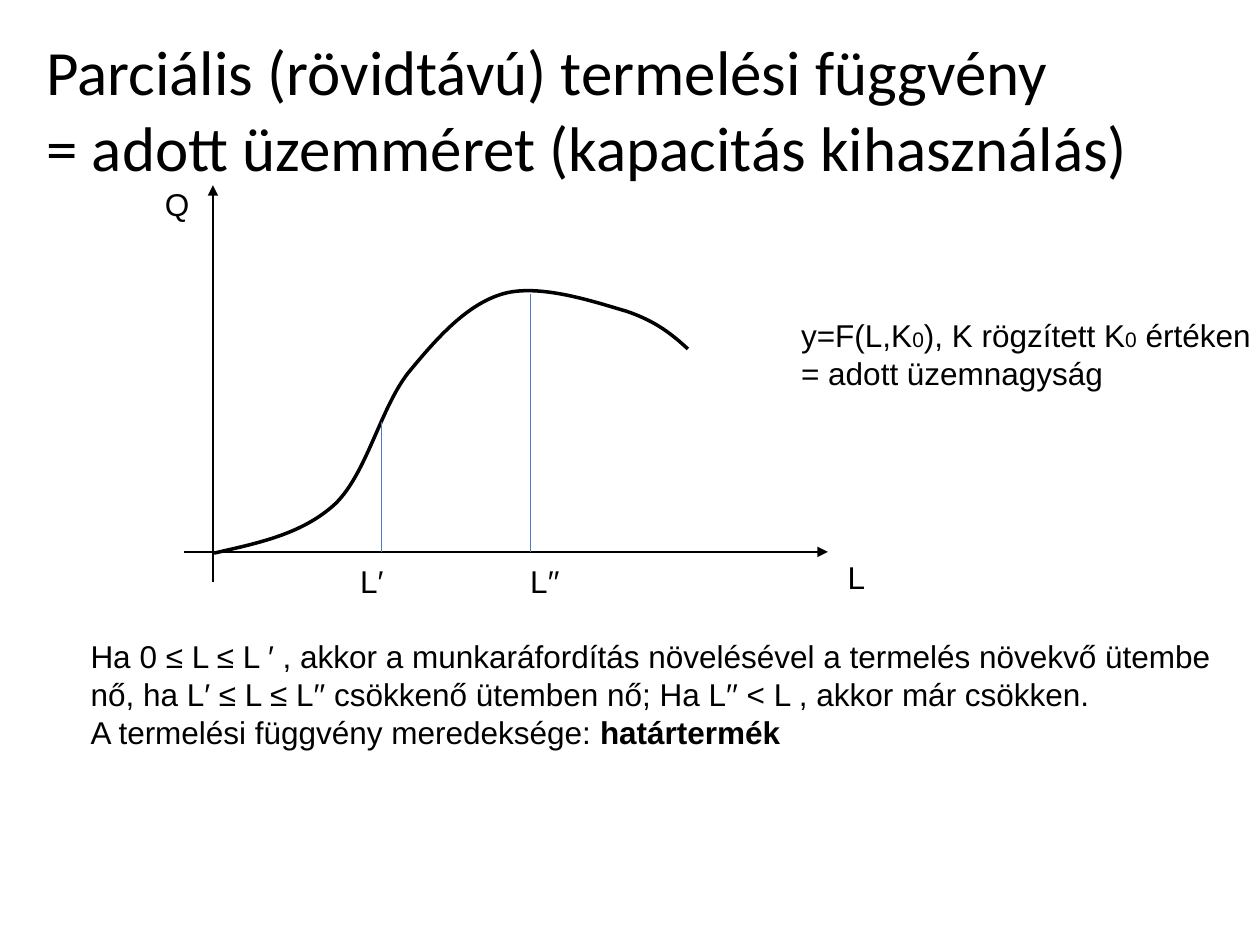
from pptx import Presentation
from pptx.dml.color import RGBColor
from pptx.enum.shapes import MSO_CONNECTOR
from pptx.enum.text import MSO_AUTO_SIZE
from pptx.oxml.ns import qn
from pptx.util import Inches, Pt
from lxml.etree import SubElement

BLACK = "000000"
BLUE = "4B7EBC"


def color(value):
    return RGBColor.from_string(value)


def add_text(page, left, top, width, height, lines, size=18, font="Arial", wrap=False, indent=0):
    box = page.shapes.add_textbox(Inches(left), Inches(top), Inches(width), Inches(height))
    frame = box.text_frame
    frame.word_wrap = wrap
    frame.auto_size = MSO_AUTO_SIZE.SHAPE_TO_FIT_TEXT
    for index, line in enumerate(lines):
        para = frame.paragraphs[0] if index == 0 else frame.add_paragraph()
        if indent:
            para.level = 1
            properties = para._p.get_or_add_pPr()
            properties.set("marL", str(Inches(indent)))
            properties.set("indent", "0")
        para.font.size = Pt(size)
        para.font.name = font
        para.font.color.rgb = color(BLACK)
        for text, style in line:
            span = para.add_run()
            span.text = text
            if style == "bold":
                span.font.bold = True
            elif style == "small":
                span.font.size = Pt(12)


def add_line(page, start, end, line_color, arrow=False):
    line = page.shapes.add_connector(MSO_CONNECTOR.STRAIGHT, *map(Inches, start + end))
    line.line.color.rgb = color(line_color)
    line.line.width = Pt(0.75)
    if arrow:
        SubElement(line.line._get_or_add_ln(), qn("a:tailEnd"), type="triangle")
    SubElement(line._element.spPr, qn("a:effectLst"))


def add_curve(page, left, top, start, segments):
    points = [(Inches(left + x), Inches(top + y)) for segment in segments for x, y in segment]
    builder = page.shapes.build_freeform(Inches(left + start[0]), Inches(top + start[1]))
    builder.add_line_segments(points, close=False)
    curve = builder.convert_to_shape()
    curve.shadow.inherit = False
    curve.fill.background()
    curve.line.color.rgb = color(BLACK)
    curve.line.width = Pt(2)
    steps = list(curve._element.iter(qn("a:lnTo")))
    outline = steps[0].getparent()
    for first in range(0, len(steps), 3):
        bend = SubElement(outline, qn("a:cubicBezTo"))
        for step in steps[first:first + 3]:
            bend.append(step[0])
            outline.remove(step)


def add_title(page, left, top, width, height):
    lines = [
        [("Parciális (rövidtávú) termelési függvény", None)],
        [("= adott üzemméret (kapacitás kihasználás)", None)],
    ]
    add_text(page, left, top, width, height, lines, size=36, font="Calibri", wrap=True)


def add_graph(page, left, top, width, height):
    axis_x, axis_y = left + 0.48, top + 2.96
    add_line(page, (axis_x, top + height), (axis_x, top + 0.05), BLACK, arrow=True)
    add_line(page, (left + 0.25, axis_y), (left + width, axis_y), BLACK, arrow=True)
    add_curve(page, left, top, (0.49, 2.97), [
        [(0.84, 2.89), (1.19, 2.82), (1.45, 2.58)],
        [(1.7, 2.34), (1.81, 1.82), (2.03, 1.54)],
        [(2.26, 1.26), (2.5, 0.99), (2.79, 0.91)],
        [(3.08, 0.83), (3.52, 0.98), (3.76, 1.05)],
        [(4, 1.13), (4.13, 1.24), (4.25, 1.35)],
    ])
    for x, y in [(3, 0.91), (1.82, 1.93)]:
        add_line(page, (left + x, top + y), (left + x, axis_y), BLUE)
    for text, x, y, label_width in [
        ("Q", 0, 0, 0.4),
        ("L", 5.42, 2.96, 0.34),
        ("L′", 1.55, 2.99, 0.39),
        ("L′′", 2.9, 2.99, 0.45),
    ]:
        add_text(page, left + x, top + y, label_width, 0.4, [[(text, None)]])


def add_formula(page, left, top, width, height):
    lines = [
        [("y=F(L,K", None), ("0", "small"), ("), K rögzített K", None),
         ("0", "small"), (" értéken", None)],
        [("= adott üzemnagyság", None)],
    ]
    add_text(page, left, top, width, height, lines)


def add_explanation(page, left, top, width, height):
    lines = [
        [("Ha 0 ≤ L ≤ L ′ , akkor a munkaráfordítás növelésével a termelés növekvő ütembe nő, "
          "ha L′ ≤ L ≤ L′′ csökkenő ütemben nő; Ha L′′ < L , akkor már csökken.", None)],
        [("A termelési függvény meredeksége: ", None), ("határtermék", "bold")],
    ]
    add_text(page, left, top, width, height, lines, wrap=True, indent=0.5)


def main():
    deck = Presentation()
    deck.slide_width = Inches(10)
    deck.slide_height = Inches(7.5)
    page = deck.slides.add_slide(deck.slide_layouts[6])
    add_title(page, 0.27, 0.21, 9.14, 1.31)
    add_graph(page, 1.21, 1.42, 5.36, 3.2)
    add_formula(page, 6.26, 2.46, 3.8, 0.71)
    add_explanation(page, 0.12, 5.01, 9.61, 1.01)
    deck.save("out.pptx")


if __name__ == "__main__":
    main()
